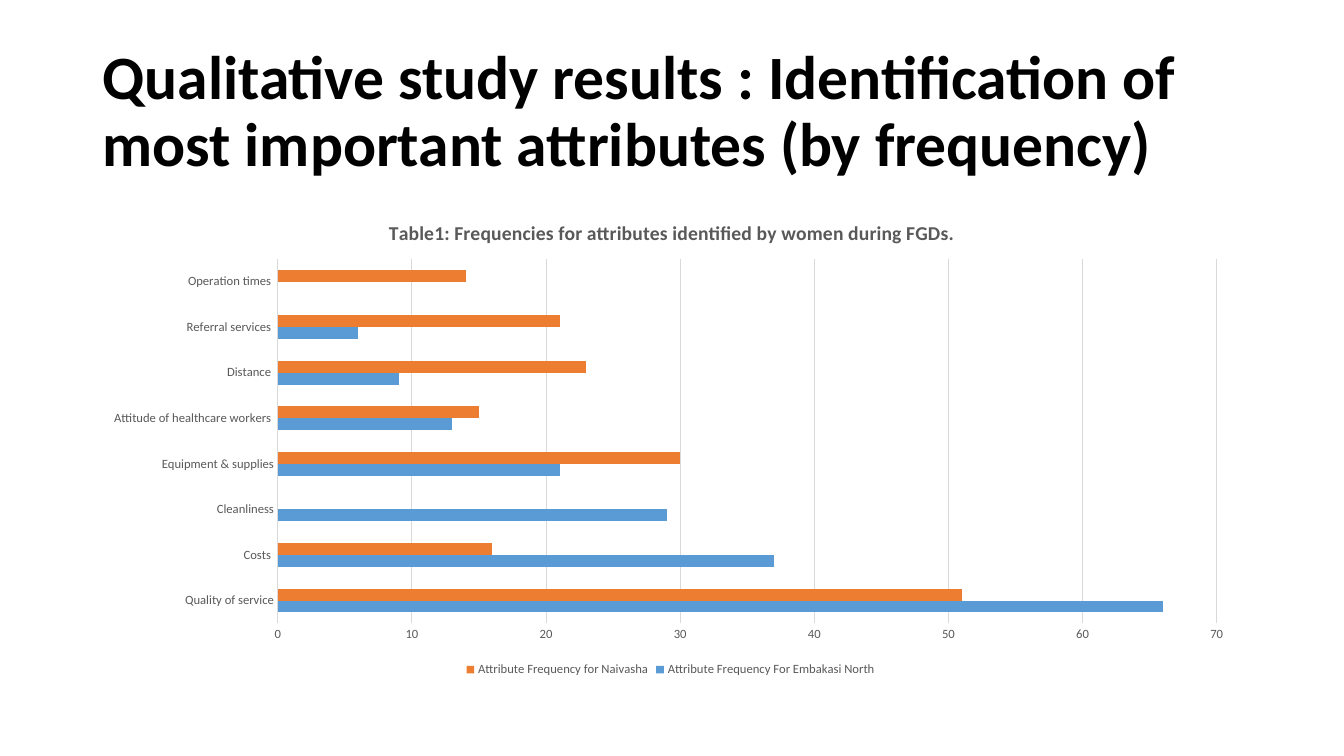
from dataclasses import dataclass

from lxml import etree
from pptx import Presentation
from pptx.chart.data import CategoryChartData
from pptx.dml.color import RGBColor
from pptx.enum.chart import XL_CHART_TYPE, XL_LEGEND_POSITION, XL_TICK_MARK
from pptx.enum.text import MSO_ANCHOR
from pptx.oxml.ns import qn
from pptx.util import Cm, Pt

BAR_CLUSTERED = XL_CHART_TYPE.BAR_CLUSTERED
BOTTOM = XL_LEGEND_POSITION.BOTTOM
NO_TICK = XL_TICK_MARK.NONE
MIDDLE = MSO_ANCHOR.MIDDLE
TITLE_ONLY = 5


@dataclass(frozen=True)
class Theme:
    font: str = "Calibri"
    ink: RGBColor = RGBColor(0x00, 0x00, 0x00)
    muted: RGBColor = RGBColor(0x59, 0x59, 0x59)
    grid: RGBColor = RGBColor(0xD9, 0xD9, 0xD9)
    embakasi: RGBColor = RGBColor(0x5B, 0x9B, 0xD5)
    naivasha: RGBColor = RGBColor(0xED, 0x7D, 0x31)
    title: Pt = Pt(44)
    chart_title: Pt = Pt(14)
    chart: Pt = Pt(10)
    label: Pt = Pt(9)
    hairline: Pt = Pt(0.75)


THEME = Theme()

TITLE = ("Qualitative study results : Identification of most important "
         "attributes (by frequency)")
CHART_TITLE = "Table1: Frequencies for attributes identified by women during FGDs."
ATTRIBUTES = ["Quality of service", "Costs ", "Cleanliness", "Equipment & supplies",
              "Attitude of healthcare workers ", "Distance ", "Referral services ",
              "Operation times "]
SERIES = [
    ("Attribute Frequency For Embakasi North ", [66, 37, 29, 21, 13, 9, 6, None],
     THEME.embakasi),
    ("Attribute Frequency for Naivasha", [51, 16, None, 30, 15, 23, 21, 14],
     THEME.naivasha),
]
PLOT_AREA = {"x": 0.16, "y": 0.12, "w": 0.81, "h": 0.76}


def style_font(font, size, color, bold=False):
    font.name = THEME.font
    font.size = size
    font.bold = bold
    font.color.rgb = color


def style_line(line):
    line.color.rgb = THEME.grid
    line.width = THEME.hairline


def add_title(slide):
    sp = slide.shapes.title
    sp.left, sp.top, sp.width, sp.height = Cm(2.33), Cm(1.01), Cm(29.21), Cm(3.68)
    tf = sp.text_frame
    tf.word_wrap = True
    tf.vertical_anchor = MIDDLE
    p = tf.paragraphs[0]
    p.line_spacing = 0.9
    p.alignment = 1
    r = p.add_run()
    r.text = TITLE
    style_font(r.font, THEME.title, THEME.ink, bold=True)


def add_chart_title(chart):
    chart.has_title = True
    chart.chart_title.include_in_layout = False
    r = chart.chart_title.text_frame.paragraphs[0].add_run()
    r.text = CHART_TITLE
    style_font(r.font, THEME.chart_title, THEME.muted, bold=True)


def style_axis(axis):
    axis.major_tick_mark = NO_TICK
    axis.minor_tick_mark = NO_TICK
    style_font(axis.tick_labels.font, THEME.label, THEME.muted)


def place_plot_area(chart):
    plot_area = chart.element.find(".//" + qn("c:plotArea"))
    layout = plot_area.find(qn("c:layout"))
    if layout is None:
        layout = etree.Element(qn("c:layout"))
        plot_area.insert(0, layout)
    manual = etree.SubElement(layout, qn("c:manualLayout"))
    settings = {"layoutTarget": "inner", "xMode": "edge", "yMode": "edge", **PLOT_AREA}
    for tag, value in settings.items():
        etree.SubElement(manual, qn("c:" + tag)).set("val", str(value))


def add_frequency_chart(slide):
    data = CategoryChartData()
    data.categories = ATTRIBUTES
    for name, values, _ in SERIES:
        data.add_series(name, values)
    chart = slide.shapes.add_chart(
        BAR_CLUSTERED, Cm(2.33), Cm(5.07), Cm(29.21), Cm(12.09), data).chart
    style_font(chart.font, THEME.chart, THEME.ink)
    add_chart_title(chart)

    plot = chart.plots[0]
    plot.gap_width = 182
    plot.overlap = 0
    plot.vary_by_categories = False
    for series, (_, _, color) in zip(plot.series, SERIES):
        series.format.fill.solid()
        series.format.fill.fore_color.rgb = color

    style_axis(chart.category_axis)
    style_line(chart.category_axis.format.line)
    axis = chart.value_axis
    style_axis(axis)
    axis.minimum_scale, axis.maximum_scale, axis.major_unit = 0, 70, 10
    axis.format.line.fill.background()
    axis.has_major_gridlines = True
    style_line(axis.major_gridlines.format.line)

    chart.has_legend = True
    chart.legend.position = BOTTOM
    chart.legend.include_in_layout = False
    style_font(chart.legend.font, THEME.label, THEME.muted)
    place_plot_area(chart)


def main():
    prs = Presentation()
    prs.slide_width, prs.slide_height = Cm(33.87), Cm(19.05)
    slide = prs.slides.add_slide(prs.slide_layouts[TITLE_ONLY])
    add_title(slide)
    add_frequency_chart(slide)
    prs.save("out.pptx")


if __name__ == "__main__":
    main()
